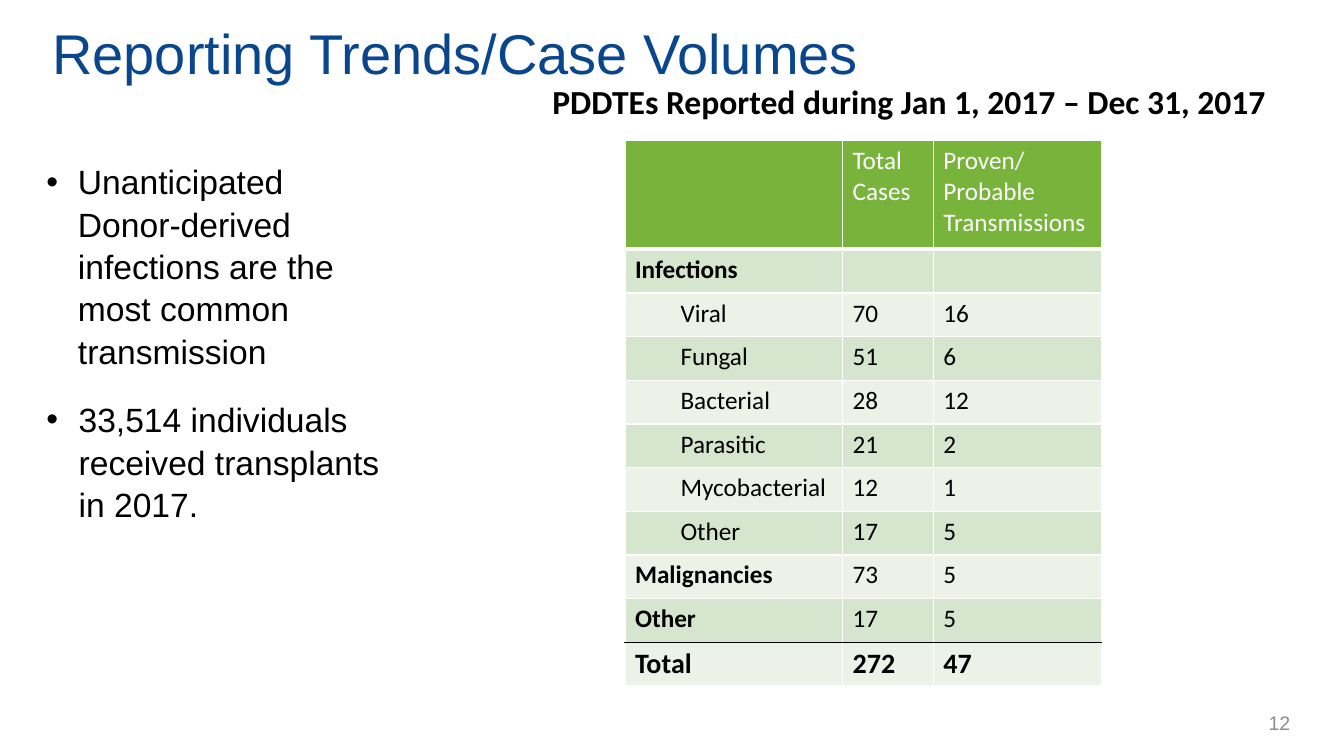
"""Build the slide on reporting trends and case volumes."""
from pptx import Presentation
from pptx.dml.color import RGBColor
from pptx.enum.text import MSO_ANCHOR as Anchor, MSO_AUTO_SIZE as AutoSize, PP_ALIGN as Align
from pptx.oxml.ns import qn
from pptx.util import Pt
from lxml.etree import SubElement

WHITE = RGBColor(0xFF, 0xFF, 0xFF)
BLACK = RGBColor(0x00, 0x00, 0x00)
BLUE = RGBColor(0x0A, 0x46, 0x8C)
GRAY = RGBColor(0x8C, 0x8C, 0x8C)
GREEN = RGBColor(0x78, 0xB4, 0x3C)
BANDS = (RGBColor(0xD6, 0xE5, 0xCE), RGBColor(0xEC, 0xF2, 0xE8))

COLUMN_WIDTHS = (155.5, 64.8, 120.2)
HEADER_HEIGHT, ROW_HEIGHT = 77.5, 31.2
HEADER = ("", "Total Cases", "Proven/\nProbable Transmissions")
GROUPS = ("Infections", "Malignancies", "Other", "Total")
CASES = (
    (0, "Infections", "", ""),
    (1, "Viral", "70", "16"),
    (1, "Fungal", "51", "6"),
    (1, "Bacterial", "28", "12"),
    (1, "Parasitic", "21", "2"),
    (1, "Mycobacterial", "12", "1"),
    (1, "Other", "17", "5"),
    (0, "Malignancies", "73", "5"),
    (0, "Other", "17", "5"),
    (0, "Total", "272", "47"),
)
BULLETS = (
    ("Unanticipated Donor-derived infections are the most common transmission",
     (26, 110.2, 256.3, 152.6), 22.5),
    ("33,514 individuals received transplants in 2017.",
     (26, 280.1, 272.9, 94.3), 23),
)


def style(paragraph, name, size, color, bold=False):
    font = paragraph.font
    font.name, font.size, font.bold = name, Pt(size), bold
    font.color.rgb = color


def place(shape, box):
    shape.left, shape.top, shape.width, shape.height = map(Pt, box)


def fill_title(title, text):
    place(title, (30.2, 12.2, 917.3, 50.4))
    frame = title.text_frame
    frame.text = text
    frame.auto_size = AutoSize.NONE
    frame.vertical_anchor = Anchor.MIDDLE
    frame.paragraphs[0].alignment = Align.LEFT
    style(frame.paragraphs[0], "Arial", 40, BLUE)


def fill_bullet(body, text, box, indent):
    place(body, box)
    frame = body.text_frame
    frame.text = text
    frame.auto_size = AutoSize.NONE
    paragraph = frame.paragraphs[0]
    properties = paragraph._p.get_or_add_pPr()
    properties.set("marL", str(Pt(indent)))
    properties.set("indent", str(-Pt(indent)))
    SubElement(properties, qn("a:buFont"), typeface="Arial")
    SubElement(properties, qn("a:buChar"), char="•")
    paragraph.space_before = Pt(0)
    paragraph.line_spacing = 1.05
    style(paragraph, "Arial", 24, BLACK)


def add_text(slide, text, box, font, align=Align.LEFT, anchor=Anchor.TOP):
    frame = slide.shapes.add_textbox(*map(Pt, box)).text_frame
    frame.word_wrap = True
    frame.vertical_anchor = anchor
    frame.text = text
    frame.paragraphs[0].alignment = align
    style(frame.paragraphs[0], *font)


def set_border(cell, side, color, width):
    line = SubElement(cell._tc.get_or_add_tcPr(), qn(f"a:ln{side}"), w=str(Pt(width)))
    SubElement(SubElement(line, qn("a:solidFill")), qn("a:srgbClr"), val=str(color))


def fill_cell(cell, text, fill, font, top, bottom, indent=0):
    for side, border in zip("LRTB", ((WHITE, 1), (WHITE, 1), top, bottom)):
        set_border(cell, side, *border)
    cell.fill.solid()
    cell.fill.fore_color.rgb = fill
    cell.text = text
    for paragraph in cell.text_frame.paragraphs:
        paragraph._p.get_or_add_pPr().set("marL", str(Pt(indent)))
        style(paragraph, *font)


def add_case_table(slide):
    thin, thick, rule = (WHITE, 1), (WHITE, 3), (BLACK, 1)
    height = HEADER_HEIGHT + ROW_HEIGHT * len(CASES)
    table = slide.shapes.add_table(
        len(CASES) + 1, len(HEADER), Pt(446.4), Pt(100.6),
        Pt(sum(COLUMN_WIDTHS)), Pt(height)).table
    table.horz_banding = False
    for column, width in zip(table.columns, COLUMN_WIDTHS):
        column.width = Pt(width)
    for row in table.rows:
        row.height = Pt(ROW_HEIGHT)
    table.rows[0].height = Pt(HEADER_HEIGHT)
    for column, text in enumerate(HEADER):
        fill_cell(table.cell(0, column), text, GREEN, ("Calibri", 18, WHITE), thin, thick)

    last = len(CASES)
    for row, (level, *values) in enumerate(CASES, 1):
        top = {1: thick, last: rule}.get(row, thin)
        bottom = rule if row == last - 1 else thin
        for column, text in enumerate(values):
            bold = row == last or (column == 0 and level == 0)
            font = ("Calibri", 20 if row == last else 18, BLACK, bold)
            indent = 32.5 if level and column == 0 else 0
            fill_cell(table.cell(row, column), text, BANDS[(row - 1) % 2],
                      font, top, bottom, indent)


def main():
    presentation = Presentation()
    presentation.slide_width, presentation.slide_height = Pt(960), Pt(540)
    slide = presentation.slides.add_slide(presentation.slide_layouts[3])
    title, *bodies = slide.placeholders
    fill_title(title, "Reporting Trends/Case Volumes")
    add_text(slide, "12", (766.1, 501.8, 162.7, 28.8), ("Arial", 14, GRAY),
             Align.RIGHT, Anchor.MIDDLE)
    add_case_table(slide)
    add_text(slide, "PDDTEs Reported during Jan 1, 2017 – Dec 31, 2017",
             (387.4, 54, 545.8, 58.3), ("Calibri", 24, BLACK, True))
    for body, bullet in zip(bodies, BULLETS):
        fill_bullet(body, *bullet)
    presentation.save("out.pptx")


if __name__ == "__main__":
    main()
